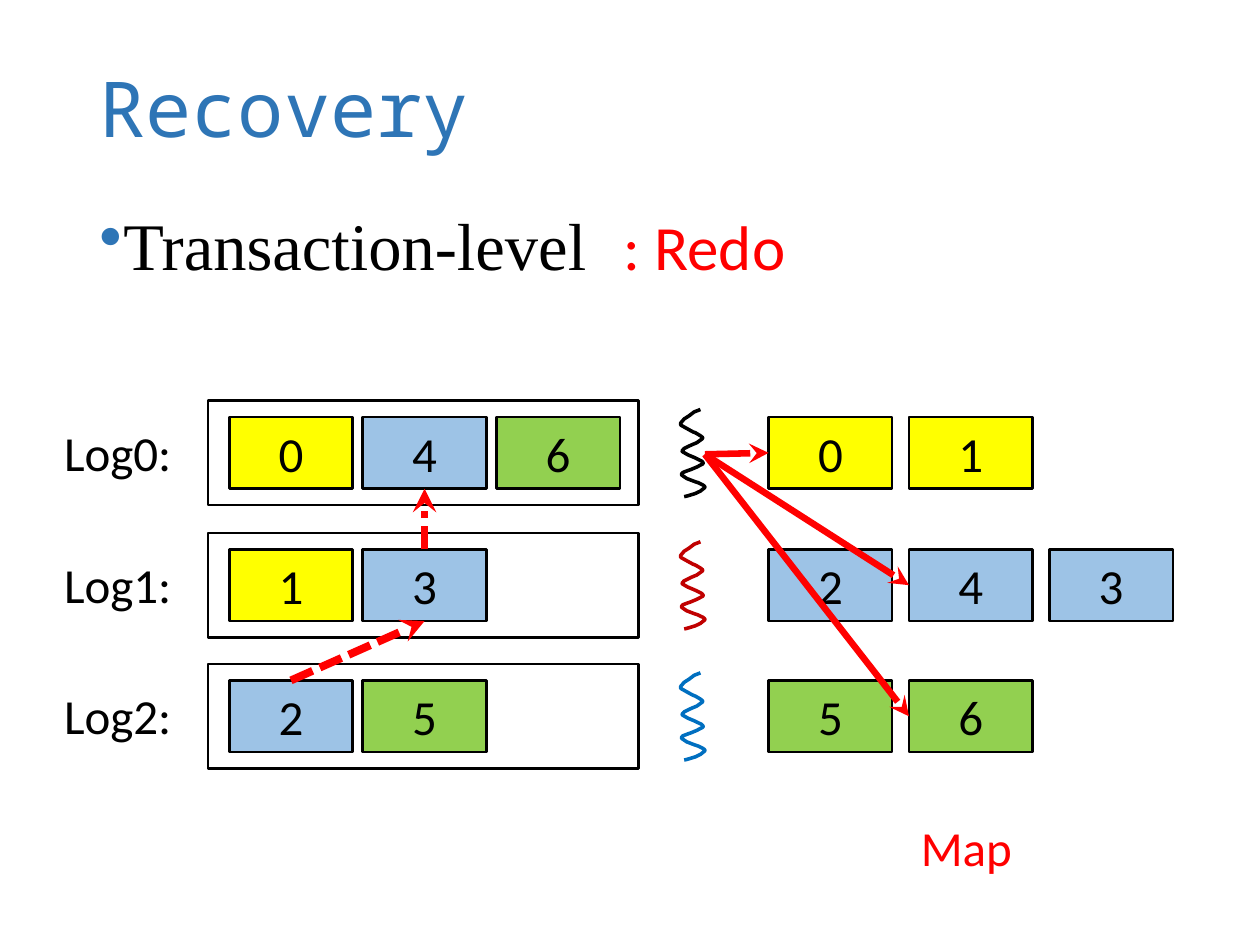
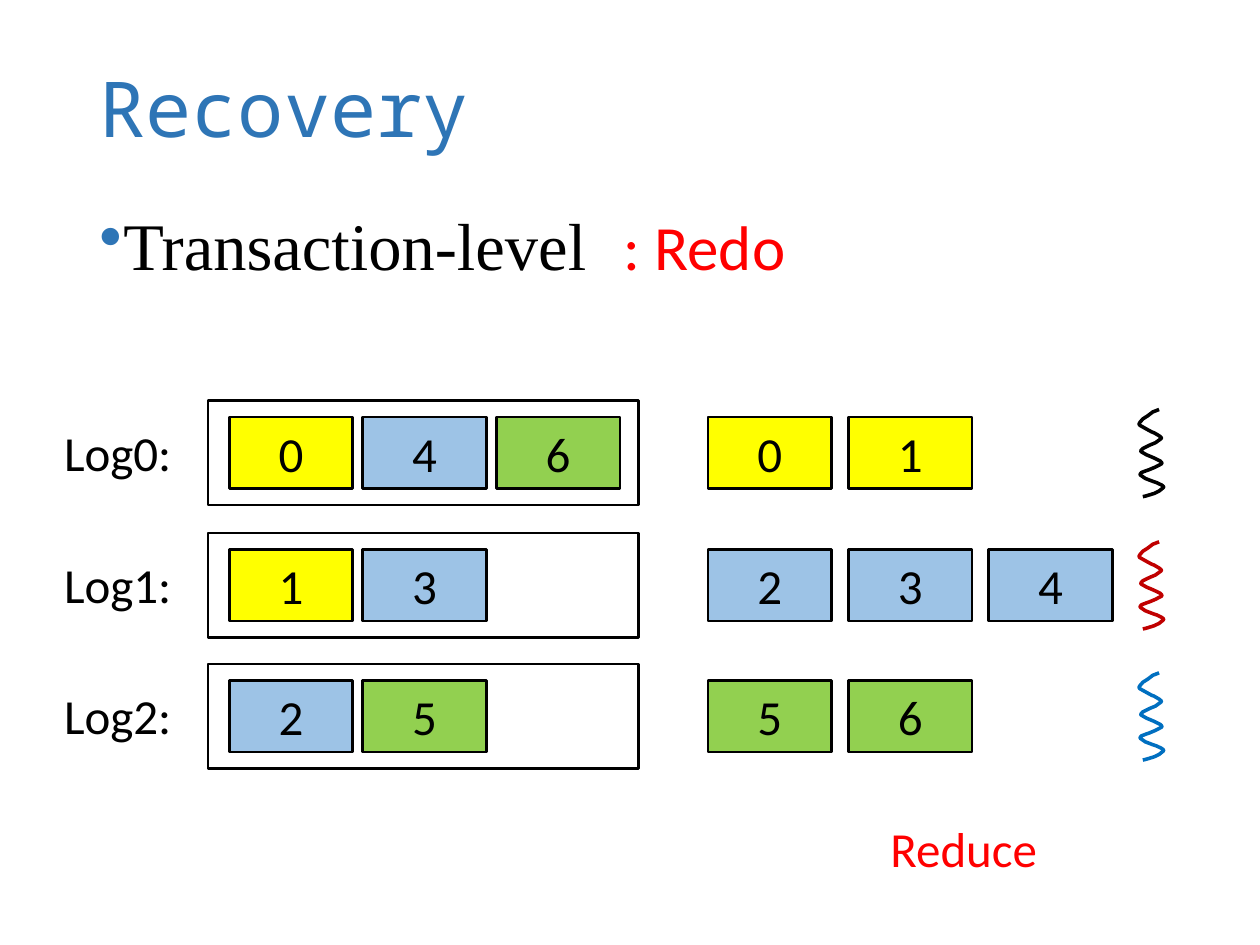
from dataclasses import dataclass

from lxml.etree import SubElement
from pptx import Presentation
from pptx.dml.color import RGBColor
from pptx.enum.dml import MSO_LINE
from pptx.enum.shapes import MSO_CONNECTOR, MSO_SHAPE
from pptx.enum.text import MSO_ANCHOR, MSO_AUTO_SIZE, PP_ALIGN
from pptx.oxml.ns import qn
from pptx.util import Pt


@dataclass(frozen=True)
class Theme:
    title: str = "2E75B6"
    ink: str = "000000"
    accent: str = "FF0000"
    paper: str = "FFFFFF"
    groups: tuple = ("FFFF00", "9DC3E6", "92D050")
    threads: tuple = ("000000", "C00000", "006FC0")
    title_font: str = "Noto Sans Mono"
    body_font: str = "Times New Roman"
    label_font: str = "Calibri"
    title_size: int = 44
    body_size: int = 38
    redo_size: int = 36
    label_size: int = 28


THEME = Theme()

LOGS = ((0, 4, 6), (1, 3), (2, 5))
GROUP_OF = {0: 0, 1: 0, 2: 1, 3: 1, 4: 1, 5: 2, 6: 2}
ROW_TOPS = (238.3, 313.9, 388.8)
CELL_WIDTH, CELL_HEIGHT = 70.6, 41
LOG_LEFT, LOG_PITCH = 131, 76.3
GROUP_PITCH = 80.2
TOP, LEFT, BOTTOM = 0, 1, 2  # connection sites of a rectangle

# Thread outline, measured from its own top left corner
WAVE = (
    (11.5, 0), (7.9, 1.4), (5, 3.6), (2.2, 5.4), (0.4, 7.5), (0, 8.3), (0.4, 9),
    (3.6, 10.8), (7.2, 12.8), (8.6, 13.3), (11.5, 15), (12.7, 16), (12.7, 16.6),
    (9.4, 19), (6.5, 20.2), (5, 20.9), (2.2, 22.3), (1, 23.6), (1.2, 24.1),
    (4.3, 25.9), (7.9, 27.4), (9.4, 28.1), (12.2, 29.5), (13, 30.4), (13, 31),
    (9.4, 32.9), (5.8, 34.4), (4.3, 34.9), (1.4, 36), (0.7, 36.9), (0.7, 37.4),
    (3.6, 39.4), (7.2, 40.8), (8.6, 41.3), (10.1, 41.8), (13, 43.2), (14, 44),
    (14, 44.6), (11.5, 46.6), (8.6, 48), (5, 49.1), (3.6, 49.5), (2.2, 49.8),
)

# caption, its left, top and width, groups, their left, left of the threads
PHASES = (
    ("Map", 519.1, 463.7, 67, ((0, 1), (2, 4, 3), (5, 6)), 439.2, 388.8),
    ("Reduce", 501.8, 464.4, 105.8, ((0, 1), (2, 3, 4), (5, 6)), 404.6, 650.9),
)


def add_text(shape, text, size, font=THEME.label_font, color=THEME.ink):
    paragraph = shape.text_frame.paragraphs[0]
    run = paragraph.add_run()
    run.text = text
    run.font.size = Pt(size)
    run.font.name = font
    run.font.color.rgb = RGBColor.from_string(color)
    return paragraph


def add_rectangle(slide, left, top, width, height, fill):
    rectangle = slide.shapes.add_shape(
        MSO_SHAPE.RECTANGLE, Pt(left), Pt(top), Pt(width), Pt(height))
    rectangle.shadow.inherit = False
    rectangle.fill.solid()
    rectangle.fill.fore_color.rgb = RGBColor.from_string(fill)
    rectangle.line.color.rgb = RGBColor.from_string(THEME.ink)
    rectangle.line.width = Pt(1.5)
    return rectangle


deck = Presentation()
deck.slide_width, deck.slide_height = Pt(720), Pt(540)

for caption, caption_left, caption_top, caption_width, groups, group_left, thread_left in PHASES:
    slide = deck.slides.add_slide(deck.slide_layouts[6])

    title = slide.shapes.add_textbox(Pt(49.7), Pt(12.2), Pt(620.6), Pt(104.4))
    title.text_frame.word_wrap = True
    title.text_frame.vertical_anchor = MSO_ANCHOR.MIDDLE
    heading = add_text(title, "Recovery", THEME.title_size, THEME.title_font, THEME.title)
    heading.line_spacing = 0.9

    topic = slide.shapes.add_textbox(Pt(49.7), Pt(118.1), Pt(620.6), Pt(64.8))
    topic.text_frame.word_wrap = True
    bullet = add_text(topic, "Transaction-level", THEME.body_size, THEME.body_font)
    bullet.line_spacing = 0.9
    bullet.space_before = Pt(10)
    properties = bullet._p.get_or_add_pPr()
    properties.set("marL", str(Pt(13.7)))
    properties.set("indent", str(Pt(-19.4)))
    bullet_color = SubElement(properties, qn("a:buClr"))
    SubElement(bullet_color, qn("a:srgbClr"), val=THEME.title)
    SubElement(properties, qn("a:buChar"), char="•")

    labels = [
        (f"Log{row}:", 29.5, top - 0.4, 82.8, 41, THEME.label_size, THEME.ink)
        for row, top in enumerate(ROW_TOPS)
    ]
    labels += [
        (": Redo", 349.2, 115.2, 108, 51, THEME.redo_size, THEME.accent),
        (caption, caption_left, caption_top, caption_width, 41,
         THEME.label_size, THEME.accent),
    ]
    for text, left, top, width, height, size, color in labels:
        label = slide.shapes.add_textbox(Pt(left), Pt(top), Pt(width), Pt(height))
        label.text_frame.word_wrap = False
        label.text_frame.auto_size = MSO_AUTO_SIZE.SHAPE_TO_FIT_TEXT
        add_text(label, text, size, color=color)

    log_cells, group_cells = {}, {}
    for top, log, group, thread_color in zip(ROW_TOPS, LOGS, groups, THEME.threads):
        add_rectangle(slide, 118.8, top - 9.4, 246.2, 59.8, THEME.paper)
        for cells, numbers, first_left, pitch in (
            (log_cells, log, LOG_LEFT, LOG_PITCH),
            (group_cells, group, group_left, GROUP_PITCH),
        ):
            for column, number in enumerate(numbers):
                cell = add_rectangle(
                    slide, first_left + column * pitch, top, CELL_WIDTH, CELL_HEIGHT,
                    THEME.groups[GROUP_OF[number]])
                cell.text_frame.vertical_anchor = MSO_ANCHOR.MIDDLE
                add_text(cell, str(number), THEME.label_size).alignment = PP_ALIGN.CENTER
                cells[number] = cell

        points = [(Pt(thread_left + x), Pt(top - 4.3 + y)) for x, y in WAVE]
        outline = slide.shapes.build_freeform(*points[0], scale=1.0)
        outline.add_line_segments(points[1:], close=False)
        thread = outline.convert_to_shape()
        thread.shadow.inherit = False
        thread.fill.background()
        thread.line.color.rgb = RGBColor.from_string(thread_color)
        thread.line.width = Pt(2.04)

    if caption != "Map":
        continue

    # Dashed arrows follow the log order; solid ones leave the first thread
    arrows = [
        (log_cells[2], log_cells[3], BOTTOM),
        (log_cells[3], log_cells[4], BOTTOM),
    ] + [(None, group_cells[number], LEFT) for number in LOGS[0]]
    for source, target, site in arrows:
        arrow = slide.shapes.add_connector(
            MSO_CONNECTOR.STRAIGHT, Pt(thread_left + 14), Pt(259.6), Pt(0), Pt(0))
        arrow.end_connect(target, site)
        arrow.line.color.rgb = RGBColor.from_string(THEME.accent)
        arrow.line.width = Pt(3.75)
        if source is not None:
            arrow.begin_connect(source, TOP)
            arrow.line.width = Pt(4.5)
            arrow.line.dash_style = MSO_LINE.SQUARE_DOT
        SubElement(arrow.line._get_or_add_ln(), qn("a:tailEnd"), type="stealth")
        SubElement(arrow._element.spPr, qn("a:effectLst"))

deck.save("out.pptx")
